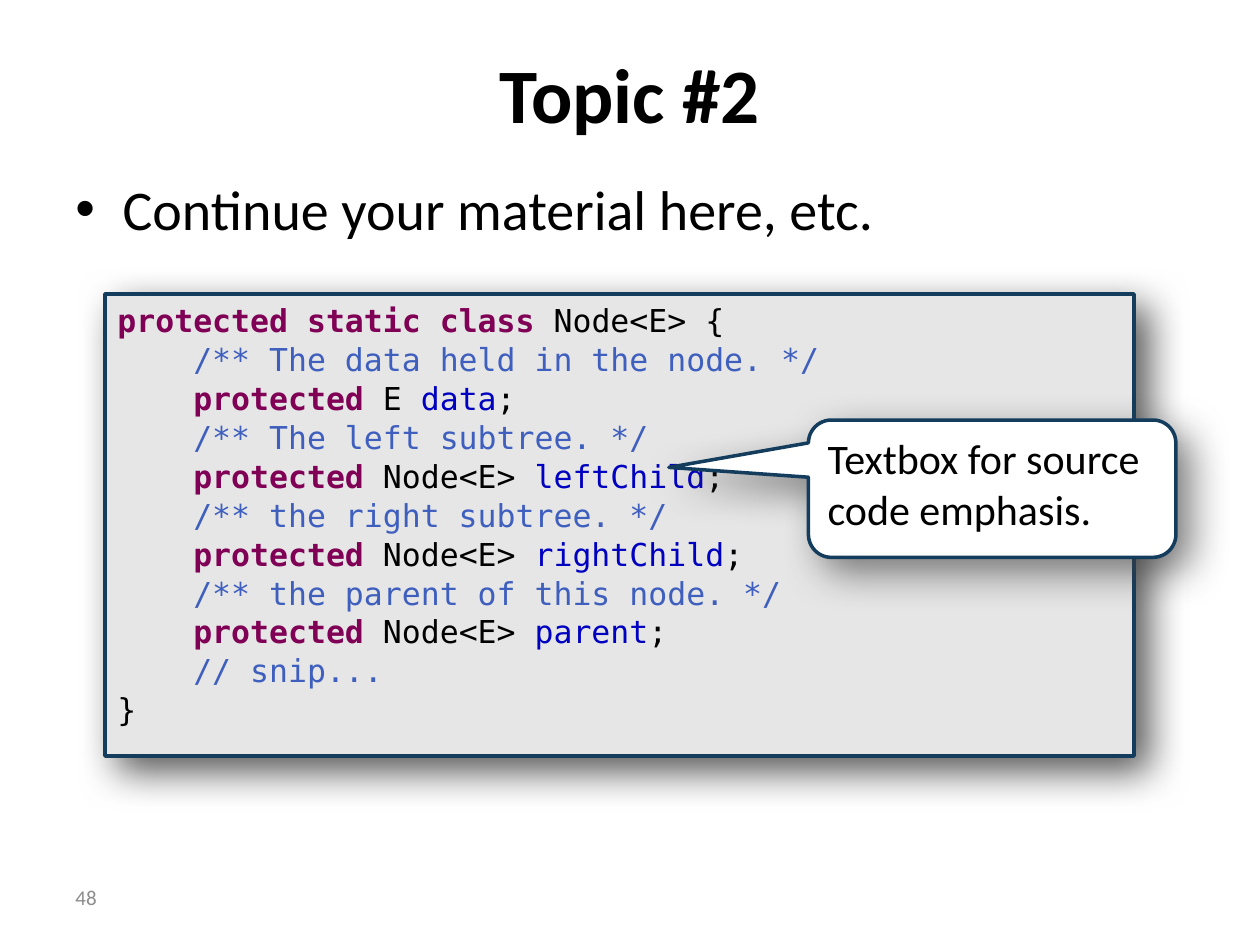
"""Build the Topic #2 slide: a bullet, a Java listing and a callout."""
from lxml.etree import SubElement
from pptx import Presentation
from pptx.dml.color import RGBColor
from pptx.enum.shapes import MSO_SHAPE
from pptx.enum.text import MSO_ANCHOR, PP_ALIGN
from pptx.oxml.ns import qn
from pptx.util import Pt


def color(hex_value):
    return RGBColor.from_string(hex_value)


def add_panel(preset, bounds, fill, shadow_color):
    panel = slide.shapes.add_shape(preset, *map(Pt, bounds))
    panel.fill.solid()
    panel.fill.fore_color.rgb = color(fill)
    panel.line.color.rgb = color("133C5D")
    panel.line.width = Pt(2)
    panel.shadow.inherit = False
    effects = panel._element.spPr.find(qn("a:effectLst"))
    shadow = SubElement(effects, qn("a:outerShdw"), blurRad=str(Pt(23)), dist=str(Pt(11)),
                        dir="2700000", algn="tl", rotWithShape="0")
    tint = SubElement(shadow, qn("a:srgbClr"), val=shadow_color)
    SubElement(tint, qn("a:alpha"), val="65000")
    panel.text_frame.vertical_anchor = MSO_ANCHOR.TOP
    return panel


prs = Presentation()
prs.slide_width, prs.slide_height = Pt(720), Pt(540)
slide = prs.slides.add_slide(prs.slide_layouts[6])

labels = [
    ("Topic #2", (36, 21.6, 648, 62.6), 44, "000000", True, PP_ALIGN.CENTER, MSO_ANCHOR.MIDDLE),
    ("Continue your material here, etc.", (36, 96, 648, 366), 32, "000000", False,
     PP_ALIGN.LEFT, MSO_ANCHOR.TOP),
    ("48", (36, 498.2, 168, 28.8), 12, "8C8C8C", False, PP_ALIGN.LEFT, MSO_ANCHOR.MIDDLE),
]
for text, bounds, size, ink, bold, align, anchor in labels:
    frame = slide.shapes.add_textbox(*map(Pt, bounds)).text_frame
    frame.word_wrap = True
    frame.vertical_anchor = anchor
    paragraph = frame.paragraphs[0]
    paragraph.text = text
    paragraph.alignment = align
    if text.startswith("Continue"):
        properties = paragraph._p.get_or_add_pPr()
        properties.set("marL", str(Pt(27)))
        properties.set("indent", str(-Pt(27)))
        SubElement(properties, qn("a:buFont"), typeface="Arial")
        SubElement(properties, qn("a:buChar"), char="•")
    paragraph.font.name = "Calibri"
    paragraph.font.size = Pt(size)
    paragraph.font.bold = bold
    paragraph.font.color.rgb = color(ink)

PLAIN, KEYWORD, COMMENT, FIELD = "000000", "7F0055", "3F5FBF", "0000C0"
INDENT = ("    ", PLAIN)
members = [
    ("/** The data held in the node. */", "E ", "data"),
    ("/** The left subtree. */", "Node<E> ", "leftChild"),
    ("/** the right subtree. */", "Node<E> ", "rightChild"),
    ("/** the parent of this node. */", "Node<E> ", "parent"),
]
code_lines = [[("protected static class ", KEYWORD), ("Node<E> {", PLAIN)]]
for comment, kind, field in members:
    code_lines.append([INDENT, (comment, COMMENT)])
    code_lines.append([INDENT, ("protected ", KEYWORD), (kind, PLAIN), (field, FIELD), (";", PLAIN)])
code_lines += [[INDENT, ("// snip...", COMMENT)], [("}", PLAIN)]]

listing = add_panel(MSO_SHAPE.RECTANGLE, (60, 168, 588, 264), "E6E6E6", "000000").text_frame
listing.word_wrap = False
for number, tokens in enumerate(code_lines):
    paragraph = listing.add_paragraph() if number else listing.paragraphs[0]
    paragraph.alignment = PP_ALIGN.LEFT
    paragraph.line_spacing = 1.03
    paragraph.font.name = "DejaVu Sans Mono"
    paragraph.font.size = Pt(18)
    for token, ink in tokens:
        run = paragraph.add_run()
        run.text = token
        run.font.color.rgb = color(ink)
        run.font.bold = ink == KEYWORD

callout = add_panel(MSO_SHAPE.ROUNDED_RECTANGULAR_CALLOUT, (462, 240, 210, 78.5), "FFFFFF", "404040")
for index, value in enumerate((-0.88, -0.155, 0.167)):
    callout.adjustments[index] = value
callout.text_frame.word_wrap = True
emphasis = callout.text_frame.paragraphs[0]
emphasis.text = "Textbox for source code emphasis."
emphasis.alignment = PP_ALIGN.LEFT
emphasis.font.name = "Calibri"
emphasis.font.size = Pt(24)
emphasis.font.color.rgb = color("000000")

prs.save("out.pptx")
